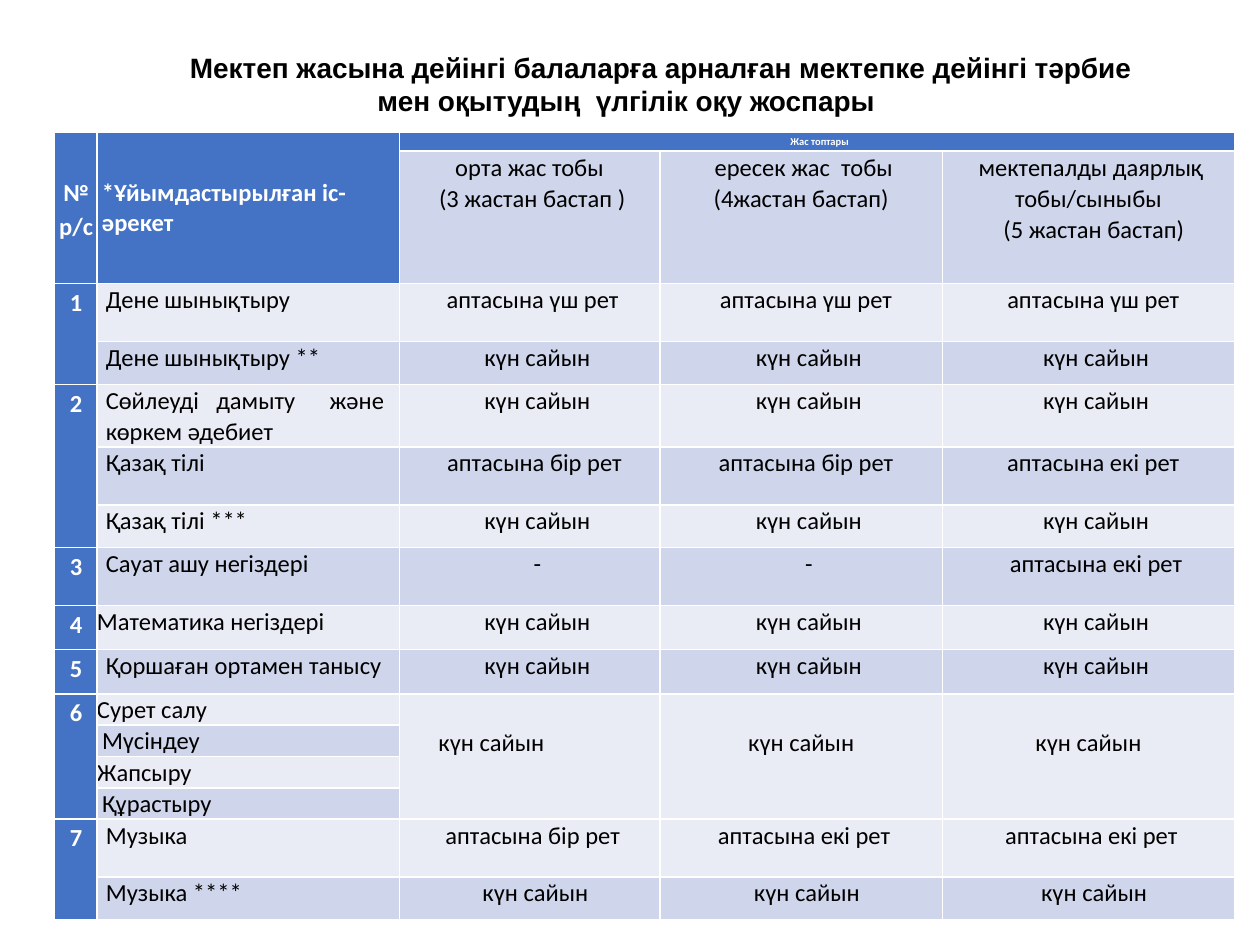
import pptx
import pptx.dml.color
import pptx.enum.text
import pptx.util

Inches = pptx.util.Inches
Pt = pptx.util.Pt
RGBColor = pptx.dml.color.RGBColor
ALIGN = pptx.enum.text.PP_ALIGN
ANCHOR = pptx.enum.text.MSO_ANCHOR

BLUE = RGBColor(0x44, 0x72, 0xC4)
BAND_DARK = RGBColor(0xCF, 0xD5, 0xEA)
BAND_LIGHT = RGBColor(0xE9, 0xEB, 0xF5)
WHITE = RGBColor(0xFF, 0xFF, 0xFF)
BLACK = RGBColor(0, 0, 0)

TITLE = ("Мектеп жасына дейінгі балаларға арналған мектепке дейінгі тәрбие "
         "мен оқытудың  үлгілік оқу жоспары ")
COL_WIDTHS = [0.34, 2.4, 2.07, 2.24, 2.32]
ROW_HEIGHTS = [0.15, 1.05, 0.46, 0.34, 0.47, 0.46, 0.34, 0.46,
               0.35, 0.35, 0.24, 0.24, 0.24, 0.24, 0.46, 0.34]
AGE_GROUPS = [
    ["орта жас тобы ", "(3 жастан бастап )"],
    ["ересек жас  тобы (4жастан бастап)"],
    ["мектепалды даярлық тобы/сыныбы", " (5 жастан бастап)"],
]
DAILY = "күн сайын"
ONCE = "аптасына бір рет "
TWICE = "аптасына екі рет "
THRICE = "аптасына үш рет "
ACTIVITIES = [
    [("Дене шынықтыру ", 0.07, [THRICE] * 3),
     ("Дене шынықтыру ** ", 0.07, [DAILY] * 3)],
    [("Сөйлеуді дамыту  және көркем әдебиет", 0.07, [DAILY] * 3),
     ("Қазақ тілі", 0.07, [ONCE, ONCE, TWICE]),
     ("Қазақ тілі ***", 0.07, [DAILY] * 3)],
    [("Сауат ашу негіздері", 0.07, ["-", "-", "аптасына екі рет"])],
    [("Математика негіздері", 0, [DAILY] * 3)],
    [("Қоршаған ортамен танысу", 0.07, [DAILY] * 3)],
    [("Сурет салу", 0, []), ("Мүсіндеу", 0.04, []),
     ("Жапсыру", 0, []), ("Құрастыру", 0.04, [])],
    [("Музыка", 0.07, [ONCE, TWICE, TWICE]),
     ("Музыка ****", 0.07, [DAILY] * 3)],
]


def add_text(p, text, size, color, bold=False, font="Calibri"):
    """Add one formatted run to a paragraph."""
    r = p.add_run()
    r.text = text
    r.font.name = font
    r.font.size = Pt(size)
    r.font.bold = bold
    r.font.color.rgb = color


def set_indent(p, left=0, first=0, right=0):
    """Set the paragraph's left, first-line and right indents in inches."""
    pPr = p._p.get_or_add_pPr()
    for name, value in (("marL", left), ("marR", right), ("indent", first)):
        pPr.set(name, str(Inches(value)))


def fill_cell(cell, lines, fill, color=BLACK, bold=False, size=14, align=ALIGN.CENTER,
              left=0, first=0, right=0, spacing=1.05, after=0, inset=0, top=0,
              anchor=ANCHOR.TOP):
    """Fill a table cell and write its paragraphs."""
    cell.fill.solid()
    cell.fill.fore_color.rgb = fill
    cell.margin_left = cell.margin_right = Inches(inset)
    cell.margin_top, cell.margin_bottom = Inches(top), 0
    cell.vertical_anchor = anchor
    tf = cell.text_frame
    for i, line in enumerate(lines):
        p = tf.add_paragraph() if i else tf.paragraphs[0]
        p.alignment = align
        p.line_spacing = spacing
        p.space_after = Pt(after)
        set_indent(p, left, first, right)
        add_text(p, line, size, color, bold)


def add_title(slide, x, y, w, h):
    """Place the slide title in the given box."""
    sp = slide.shapes.title
    sp.left, sp.top, sp.width, sp.height = x, y, w, h
    tf = sp.text_frame
    tf.word_wrap = True
    tf.vertical_anchor = ANCHOR.MIDDLE
    p = tf.paragraphs[0]
    p.alignment = ALIGN.CENTER
    set_indent(p, first=0.49)
    add_text(p, TITLE, 16, BLACK, True, "Arial")


def fill_header(table):
    """Fill the two header rows."""
    for col in (0, 1):
        table.cell(0, col).merge(table.cell(1, col))
    table.cell(0, 2).merge(table.cell(0, 4))
    fill_cell(table.cell(0, 0), ["№ р/с"], BLUE, WHITE, True, left=0.01,
              spacing=1.15, after=1, anchor=ANCHOR.MIDDLE)
    fill_cell(table.cell(0, 1), ["*Ұйымдастырылған іс-әрекет"], BLUE, WHITE, True,
              align=ALIGN.LEFT, spacing=1.0, inset=0.04, anchor=ANCHOR.MIDDLE)
    fill_cell(table.cell(0, 2), ["Жас топтары"], BLUE, WHITE, True, size=6,
              first=0.04, inset=0.04, anchor=ANCHOR.MIDDLE)
    for col, lines in enumerate(AGE_GROUPS, 2):
        fill_cell(table.cell(1, col), lines, BAND_DARK, first=0.04, inset=0.04)


def fill_group(table, top, number, activities):
    """Fill the rows of one numbered group of activities."""
    last = top + len(activities) - 1
    if last > top:
        table.cell(top, 0).merge(table.cell(last, 0))
    fill_cell(table.cell(top, 0), [str(number)], BLUE, WHITE, True,
              left=0.01, spacing=1.15, after=1)
    for row, (name, left, values) in enumerate(activities, top):
        band = BAND_DARK if row % 2 else BAND_LIGHT
        fill_cell(table.cell(row, 1), [name], band, align=ALIGN.JUSTIFY,
                  left=left, right=0.12 if left else 0)
        for col, value in enumerate(values, 2):
            narrow = number == 7 or (row, col) == (2, 2)
            fill_cell(table.cell(row, col), [value], band,
                      left=0.09 if narrow else 0.12, inset=0 if col == 2 else 0.04)
    if not activities[0][2]:
        for col in (2, 3, 4):
            table.cell(top, col).merge(table.cell(last, col))
            fill_cell(table.cell(top, col), [DAILY], BAND_LIGHT, top=0.26,
                      align=ALIGN.LEFT if col == 2 else ALIGN.CENTER,
                      left=0.31 if col == 2 else 0, inset=0 if col == 2 else 0.04)


def add_plan_table(slide, x, y, w, h):
    """Place the curriculum table in the given box."""
    table = slide.shapes.add_table(len(ROW_HEIGHTS), len(COL_WIDTHS), x, y, w, h).table
    for col, width in zip(table.columns, COL_WIDTHS):
        col.width = Inches(width)
    for row, height in zip(table.rows, ROW_HEIGHTS):
        row.height = Inches(height)
    fill_header(table)
    top = 2
    for number, activities in enumerate(ACTIVITIES, 1):
        fill_group(table, top, number, activities)
        top += len(activities)


def main():
    """Build the slide and save it."""
    prs = pptx.Presentation()
    prs.slide_width, prs.slide_height = Inches(10), Inches(7.5)
    slide = prs.slides.add_slide(prs.slide_layouts[5])
    add_title(slide, Inches(0.69), Inches(0.25), Inches(8.62), Inches(0.83))
    add_plan_table(slide, Inches(0.43), Inches(1.05), Inches(9.38), Inches(6.25))
    prs.save("out.pptx")


if __name__ == "__main__":
    main()
